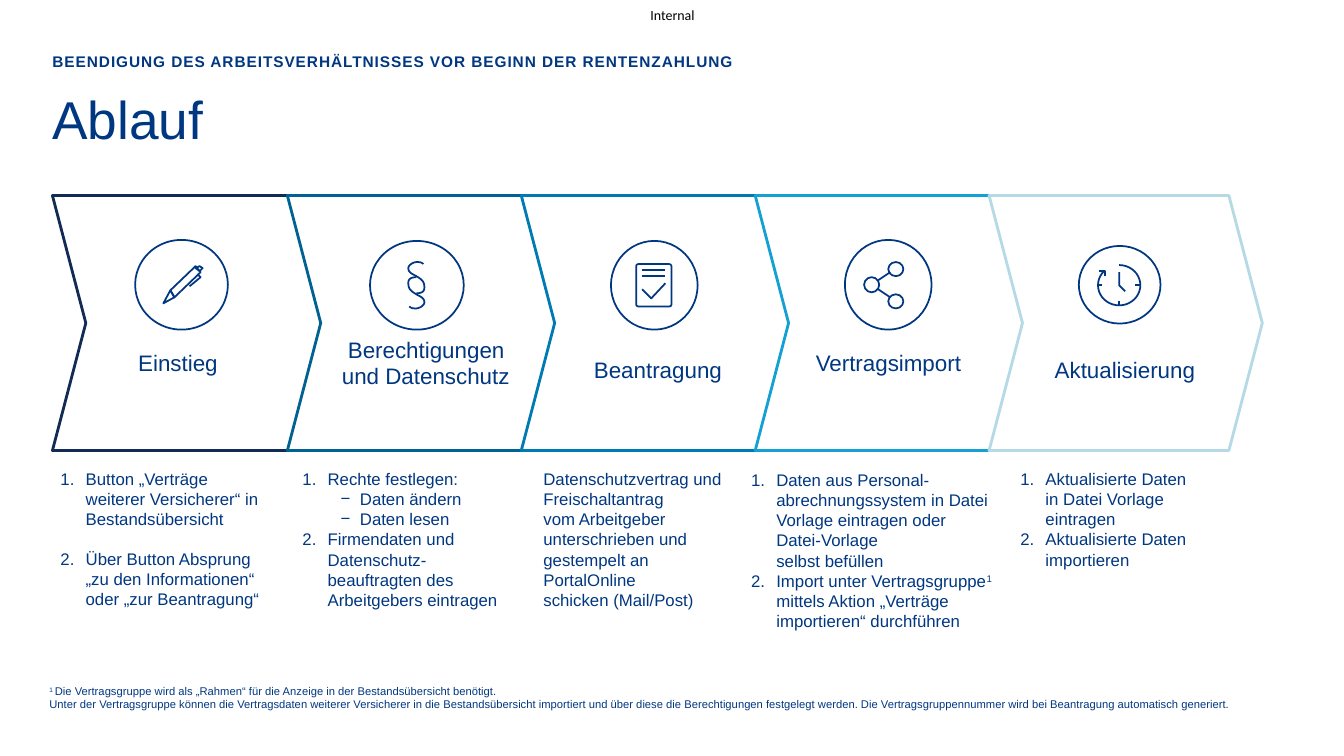
from math import cos, radians, sin

from lxml import etree
from pptx import Presentation
from pptx.dml.color import RGBColor
from pptx.enum.shapes import MSO_CONNECTOR, MSO_SHAPE
from pptx.enum.text import MSO_ANCHOR, MSO_AUTO_SIZE, PP_ALIGN
from pptx.oxml.ns import qn
from pptx.util import Inches, Pt

CHEVRON, OVAL, ROUNDED = MSO_SHAPE.CHEVRON, MSO_SHAPE.OVAL, MSO_SHAPE.ROUNDED_RECTANGLE
STRAIGHT = MSO_CONNECTOR.STRAIGHT
TOP, MIDDLE = MSO_ANCHOR.TOP, MSO_ANCHOR.MIDDLE
LEFT, CENTER = PP_ALIGN.LEFT, PP_ALIGN.CENTER
NO_FIT = MSO_AUTO_SIZE.NONE

THEME = {
    "font": "Arial", "marking_font": "Calibri",
    "ink": "003781", "black": "000000", "white": "FFFFFF",
    "steps": ["122B54", "006192", "007AB3", "13A0D3", "B5DAE6"],
    "title": 38, "label": 16, "body": 12, "kicker": 11, "marking": 10, "note": 8,
    "step_line": 2, "icon_line": 1.25,
}
# Paragraph kinds: left margin, first-line indent (inches), bullet tag, bullet attributes
KINDS = {
    "plain": (0, 0, "a:buNone", {}),
    "number": (0.25, -0.25, "a:buAutoNum", {"type": "arabicPeriod"}),
    "second": (0.25, -0.25, "a:buAutoNum", {"type": "arabicPeriod", "startAt": "2"}),
    "dash": (0.57, -0.19, "a:buChar", {"char": "−"}),
}


def write_text(shape, paragraphs, size, insets=(0, 0, 0, 0), anchor=TOP, align=LEFT,
               font=THEME["font"], color=THEME["ink"], first_indent=0, gap=0, run_format=None):
    """Fill a shape with (kind, text) paragraphs; ^ marks off superscript."""
    frame = shape.text_frame
    frame_format = {"word_wrap": True, "auto_size": NO_FIT, "vertical_anchor": anchor}
    for name, value in frame_format.items():
        setattr(frame, name, value)
    for side, inset in zip(("left", "top", "right", "bottom"), insets):
        setattr(frame, "margin_" + side, Inches(inset))
    for index, (kind, text) in enumerate(paragraphs):
        para = frame.paragraphs[0] if index == 0 else frame.add_paragraph()
        margin, indent, tag, attributes = KINDS[kind]
        properties = para._p.get_or_add_pPr()
        properties.set("marL", str(Inches(margin)))
        properties.set("indent", str(Inches(indent + first_indent)))
        etree.SubElement(properties, qn("a:buFont"), {"typeface": font})
        etree.SubElement(properties, qn(tag), attributes)
        para.level = 1 if kind == "dash" else 0
        para.alignment = align
        para.space_before = Pt(gap if index else 0)
        for part_index, part in enumerate(text.split("^")):
            for line_index, line in enumerate(part.split("\n")):
                if line_index:
                    para.add_line_break()
                if not line:
                    continue
                span = para.add_run()
                span.text = line
                for name, value in {"size": Pt(size), "name": font, "bold": False}.items():
                    setattr(span.font, name, value)
                span.font.color.rgb = RGBColor.from_string(color)
                span_properties = span._r.get_or_add_rPr()
                if part_index % 2:
                    span_properties.set("baseline", "30000")
                for name, value in (run_format or {}).items():
                    span_properties.set(name, value)


def style_outline(shape, color, width, fill=None):
    shape.shadow.inherit = False
    shape.line.color.rgb = RGBColor.from_string(color)
    shape.line.width = Pt(width)
    if fill:
        shape.fill.solid()
        shape.fill.fore_color.rgb = RGBColor.from_string(fill)
    else:
        shape.fill.background()


deck = Presentation()
deck.slide_width, deck.slide_height = Inches(13.33), Inches(7.5)
page = deck.slides.add_slide(deck.slide_layouts[1])
shapes = page.shapes

# Heading placeholders, marking and footnote
title, kicker = shapes.title, page.placeholders[1]
marking = shapes.add_textbox(0, 0, 0, 0)
footnote = shapes.add_textbox(0, 0, 0, 0)
frames = [(title, 0.52, 0.96, 11.21, 0.51), (kicker, 0.52, 0.52, 10.2, 0.28),
          (marking, 6.3, 0, 0.74, 0.29), (footnote, 0.41, 6.71, 12.14, 0.56)]
for box, *lengths in frames:
    for name, value in zip(("left", "top", "width", "height"), lengths):
        setattr(box, name, Inches(value))
write_text(title, [("plain", "Ablauf")], THEME["title"])
title.text_frame.paragraphs[0].line_spacing = Pt(THEME["title"])
write_text(kicker, [("plain", "BEENDIGUNG DES ARBEITSVERHÄLTNISSES VOR BEGINN DER RENTENZAHLUNG")],
           THEME["kicker"], run_format={"b": "1", "spc": "64"})
write_text(marking, [("plain", "Internal")], THEME["marking"], anchor=MIDDLE, align=CENTER,
           font=THEME["marking_font"], color=THEME["black"])
write_text(footnote, [("plain", "^1 ^Die Vertragsgruppe wird als „Rahmen“ für die Anzeige in der "
                       "Bestandsübersicht benötigt.\nUnter der Vertragsgruppe können die Vertragsdaten "
                       "weiterer Versicherer in die Bestandsübersicht importiert und über diese die "
                       "Berechtigungen festgelegt werden. Die Vertragsgruppennummer wird bei "
                       "Beantragung automatisch generiert.")], THEME["note"], (0.08,) * 4)

# Process chevrons: label, top inset, first-line indent
steps = [("Einstieg", 1.52, 0.31), ("Berechtigungen und Datenschutz", 1.39, 0.06),
         ("Beantragung", 1.59, 0.18), ("Vertragsimport", 1.52, 0.06), ("Aktualisierung", 1.59, 0.11)]
for index, (label, label_top, label_indent) in enumerate(steps):
    chevron = shapes.add_shape(CHEVRON, Inches(0.52 + 2.32 * index + 0.01 * (index > 0)),
                               Inches(1.94), Inches(2.71), Inches(2.53))
    chevron.adjustments[0] = 0.131
    style_outline(chevron, THEME["steps"][index], THEME["step_line"], THEME["white"])
    write_text(chevron, [("plain", label)], THEME["label"], (0.21, label_top, 0.04, 0),
               first_indent=label_indent)

# Icon rings, share nodes and form sheet
icon_shapes = [
    (OVAL, 1.34, 2.38, 0.92, 0.89), (OVAL, 3.67, 2.39, 0.93, 0.88), (OVAL, 6.06, 2.39, 0.86, 0.88),
    (OVAL, 8.38, 2.38, 0.86, 0.89), (OVAL, 10.7, 2.44, 0.81, 0.77),
    (OVAL, 8.81, 2.6, 0.15, 0.14), (OVAL, 8.81, 2.92, 0.15, 0.14), (OVAL, 8.57, 2.75, 0.15, 0.15),
    (ROUNDED, 6.31, 2.62, 0.35, 0.42),
]
for preset, *lengths in icon_shapes:
    outline = shapes.add_shape(preset, *map(Inches, lengths))
    if preset == ROUNDED:
        outline.adjustments[0] = 0.06
    style_outline(outline, THEME["ink"], THEME["icon_line"])

# Paragraph sign: one Bézier hook and its half-turn about the ring centre
hook = [(4.2, 2.62), (4.18, 2.6), (4.16, 2.6), (4.13, 2.6), (4.1, 2.6), (4.05, 2.63), (4.05, 2.66),
        (4.05, 2.71), (4.1, 2.72), (4.13, 2.74), (4.18, 2.77), (4.21, 2.79), (4.21, 2.85),
        (4.21, 2.88), (4.2, 2.91), (4.13, 2.91)]
upper_hook = hook[:1]
for start in range(0, len(hook) - 1, 3):
    for t in [step / 8 for step in range(1, 9)]:
        weights = ((1 - t) ** 3, 3 * t * (1 - t) ** 2, 3 * t * t * (1 - t), t ** 3)
        upper_hook.append(tuple(sum(w * point[axis] for w, point in zip(weights, hook[start:start + 4]))
                                for axis in (0, 1)))
lower_hook = [(8.26 - x, 5.66 - y) for x, y in upper_hook]
clock_arc = [(11.1 + 0.21 * cos(radians(angle)), 2.83 + 0.2 * sin(radians(angle)))
             for angle in range(-90, 226, 9)]

# Icon strokes; a stroke ending where it starts is closed
strokes = [
    [(1.73, 2.95), (1.69, 2.88), (1.94, 2.64), (1.99, 2.7), (1.73, 2.95)],
    [(1.98, 2.69), (1.94, 2.66), (1.98, 2.64), (2.01, 2.66), (1.98, 2.69)],
    [(1.62, 3.01), (1.69, 2.88), (1.73, 2.95), (1.62, 3.01)],
    [(1.96, 2.72), (1.99, 2.75), (1.88, 2.84)],
    upper_hook, lower_hook,
    [(6.37, 2.68), (6.6, 2.68)], [(6.37, 2.74), (6.6, 2.74)],
    [(6.37, 2.87), (6.46, 2.96), (6.6, 2.81)],
    [(8.83, 2.7), (8.71, 2.78)], [(8.71, 2.87), (8.83, 2.95)],
    clock_arc, [(11.1, 2.7), (11.1, 2.83), (11.16, 2.89)],
    [(10.96, 2.74), (10.96, 2.69), (10.9, 2.69)],
    [(10.89, 2.83), (10.93, 2.83)], [(11.26, 2.83), (11.31, 2.83)], [(11.1, 3.03), (11.1, 2.99)],
]
for stroke in strokes:
    points = [(Inches(x), Inches(y)) for x, y in stroke]
    if len(points) == 2:
        line = shapes.add_connector(STRAIGHT, *points[0], *points[1])
        line.line.color.rgb = RGBColor.from_string(THEME["ink"])
        line.line.width = Pt(THEME["icon_line"])
        etree.SubElement(line._element.spPr, qn("a:effectLst"))
    else:
        closed = points[0] == points[-1]
        builder = shapes.build_freeform(*points[0])
        builder.add_line_segments(points[1:], close=closed)
        style_outline(builder.convert_to_shape(), THEME["ink"], THEME["icon_line"])

# Step descriptions: left, top, width, gap between paragraphs, paragraphs
descriptions = [
    (0.29, 4.49, 2.64, 14, [
        ("number", "Button „Verträge weiterer Versicherer“ in Bestandsübersicht"),
        ("number", "Über Button Absprung „zu den Informationen“ oder „zur Beantragung“")]),
    (2.69, 4.49, 2.67, 0, [
        ("number", "Rechte festlegen:"), ("dash", "Daten ändern"), ("dash", "Daten lesen"),
        ("second", "Firmendaten und Datenschutz-\nbeauftragten des Arbeitgebers eintragen")]),
    (5.08, 4.49, 2.43, 0, [
        ("plain", "Datenschutzvertrag und Freischaltantrag"),
        ("plain", "vom Arbeitgeber unterschrieben und gestempelt an PortalOnline\nschicken (Mail/Post)")]),
    (7.14, 4.5, 3.06, 0, [
        ("number", "Daten aus Personal-abrechnungssystem in Datei Vorlage eintragen oder\n"
                   "Datei-Vorlage\nselbst befüllen"),
        ("number", "Import unter Vertragsgruppe^1^ mittels Aktion „Verträge importieren“ durchführen")]),
    (9.81, 4.49, 2.37, 0, [
        ("number", "Aktualisierte Daten in Datei Vorlage eintragen"),
        ("number", "Aktualisierte Daten importieren")]),
]
for left, top, width, gap, paragraphs in descriptions:
    box = shapes.add_textbox(Inches(left), Inches(top), Inches(width), Inches(1.87))
    write_text(box, paragraphs, THEME["body"], (0.31, 0.16, 0.31, 0), gap=gap)

deck.save("out.pptx")
